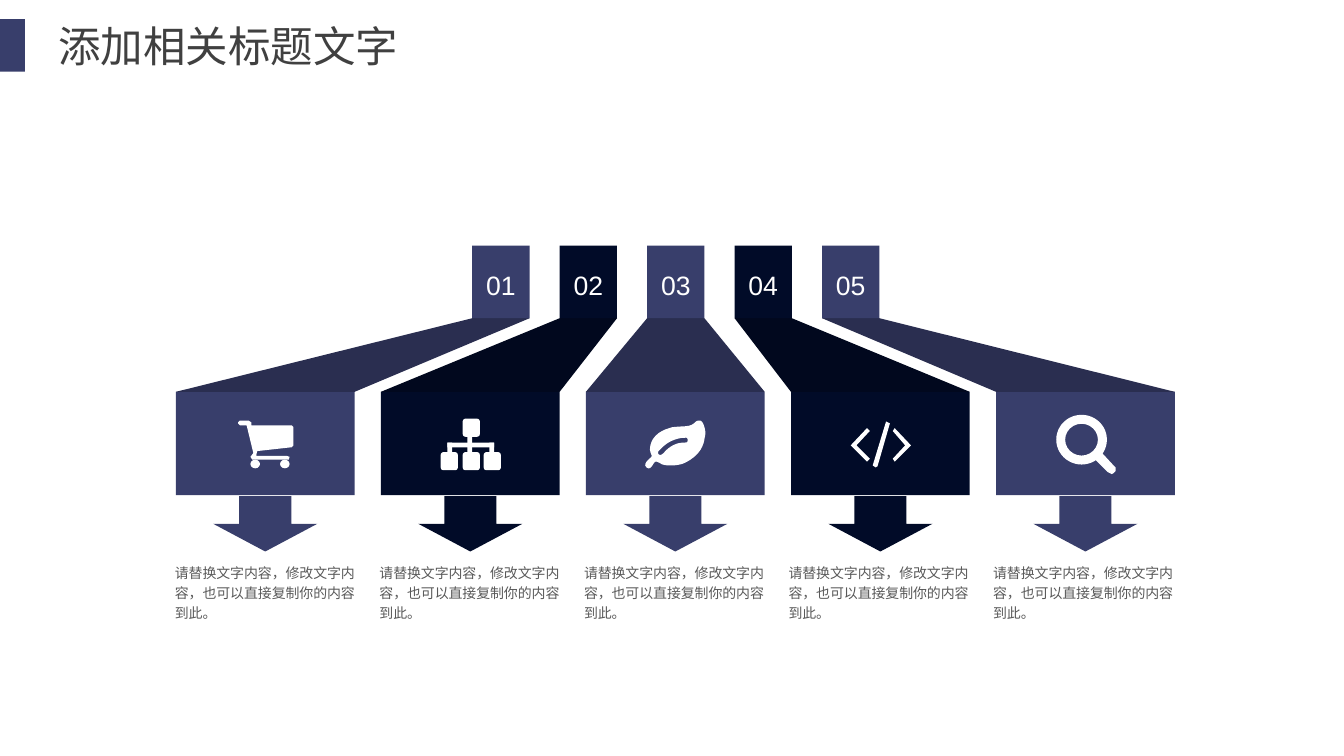
"""Build a slide where five numbered tabs fan out into icon blocks with captions."""
from pptx import Presentation
from pptx.dml.color import RGBColor
from pptx.enum.shapes import MSO_SHAPE
from pptx.enum.text import MSO_ANCHOR, PP_ALIGN
from pptx.util import Inches, Pt

COLORS = {
    "indigo": "383E6B", "indigo_shade": "2A2E50",
    "navy": "010B28", "navy_shade": "01081E",
    "white": "FFFFFF", "title": "404040", "caption": "595959",
}
TITLE = "添加相关标题文字"
CAPTION = "请替换文字内容，修改文字内容，也可以直接复制你的内容到此。"
NO_MARGINS = {"margin_left": 0, "margin_right": 0, "margin_top": 0, "margin_bottom": 0}
COLUMN_COUNT = 5
BLOCK_LEFT, BLOCK_STEP, BLOCK_TOP, BLOCK_WIDTH, BLOCK_HEIGHT = 1.84, 2.145, 4.1, 1.87, 1.08
TAB_LEFT, TAB_STEP, TAB_TOP, TAB_WIDTH, TAB_HEIGHT = 4.94, 0.915, 2.57, 0.6, 0.76
ARROW_TOP, ARROW_WIDTH, ARROW_HEIGHT = 5.19, 1.09, 0.58
CAPTION_LEFT, CAPTION_STEP = 1.83, 2.14
UNITS_PER_INCH = 1000

CART = [(2.51, 4.4), (2.6, 4.4), (2.63, 4.42), (2.63, 4.45), (3.05, 4.45), (3.07, 4.47),
        (3.07, 4.66), (3.05, 4.68), (2.69, 4.72), (2.68, 4.77), (3.0, 4.77), (3.03, 4.78),
        (3.02, 4.81), (2.64, 4.81), (2.62, 4.78), (2.65, 4.74), (2.58, 4.45), (2.51, 4.45),
        (2.49, 4.43), (2.49, 4.42)]
CODE_MARKS = [
    [(9.07, 4.48), (9.1, 4.51), (8.96, 4.66), (9.1, 4.8), (9.07, 4.83), (8.9, 4.66)],
    [(9.27, 4.41), (9.31, 4.43), (9.18, 4.88), (9.16, 4.89), (9.13, 4.87)],
    [(9.36, 4.48), (9.53, 4.66), (9.36, 4.83), (9.34, 4.8), (9.47, 4.66), (9.34, 4.51)],
]
LENS_HANDLE = [(11.46, 4.81), (11.53, 4.74), (11.65, 4.87), (11.67, 4.89), (11.67, 4.93),
               (11.65, 4.95), (11.63, 4.96), (11.59, 4.94)]
LEAF = [
    (7.37, 4.6), (7.35, 4.71), (7.28, 4.78), (7.19, 4.83), (7.14, 4.86), (7.08, 4.87),
    (7.03, 4.87), (7.0, 4.87), (6.96, 4.87), (6.93, 4.86), (6.91, 4.85), (6.88, 4.83),
    (6.86, 4.83), (6.84, 4.83), (6.82, 4.9), (6.79, 4.9), (6.77, 4.9), (6.76, 4.89),
    (6.75, 4.87), (6.75, 4.82), (6.82, 4.79), (6.82, 4.77), (6.81, 4.75), (6.8, 4.72),
    (6.8, 4.7), (6.8, 4.59), (6.89, 4.51), (7.0, 4.48), (7.07, 4.45), (7.21, 4.48),
    (7.26, 4.43), (7.28, 4.41), (7.29, 4.4), (7.32, 4.4), (7.36, 4.4), (7.38, 4.5),
    (7.38, 4.53), (7.38, 4.56), (7.37, 4.58), (7.37, 4.6),
]
LEAF_VEIN = [
    (7.18, 4.58), (7.06, 4.58), (6.97, 4.63), (6.89, 4.72), (6.88, 4.73), (6.88, 4.76),
    (6.91, 4.76), (6.93, 4.76), (6.96, 4.72), (6.97, 4.71), (7.04, 4.65), (7.09, 4.63),
    (7.18, 4.63), (7.2, 4.63), (7.2, 4.58), (7.18, 4.58),
]


def paint(shape, color):
    """Give a shape a flat fill without outline or shadow."""
    shape.shadow.inherit = False
    shape.fill.solid()
    shape.fill.fore_color.rgb = RGBColor.from_string(COLORS[color])
    shape.line.fill.background()


def add_preset(slide, kind, left, top, width, height, color):
    """Add a painted preset shape."""
    shape = slide.shapes.add_shape(kind, Inches(left), Inches(top), Inches(width), Inches(height))
    paint(shape, color)
    return shape


def add_outline(slide, contours, color):
    """Add one painted freeform made of closed contours."""
    scaled = [[(x * UNITS_PER_INCH, y * UNITS_PER_INCH) for x, y in points] for points in contours]
    builder = slide.shapes.build_freeform(*scaled[0][0], scale=Inches(1) / UNITS_PER_INCH)
    for index, points in enumerate(scaled):
        if index:
            builder.move_to(*points[0])
        builder.add_line_segments(points[1:], close=True)
    paint(builder.convert_to_shape(), color)


def curve_points(controls, steps=8):
    """Sample a chain of cubic curves into outline points."""
    points = [controls[0]]
    for first in range(0, len(controls) - 1, 3):
        curve = controls[first:first + 4]
        for step in range(1, steps + 1):
            t = step / steps
            weights = ((1 - t) ** 3, 3 * t * (1 - t) ** 2, 3 * t ** 2 * (1 - t), t ** 3)
            points.append(tuple(sum(w * point[axis] for w, point in zip(weights, curve))
                                for axis in (0, 1)))
    return points


def write_text(shape, text, size, color, frame_format, paragraph_format):
    """Write one formatted paragraph into a shape."""
    frame = shape.text_frame
    frame.text = text
    paragraph = frame.paragraphs[0]
    font_format = {"name": "Arial", "size": Pt(size), "bold": False}
    for target, values in ((frame, {"word_wrap": True, **frame_format}),
                           (paragraph, paragraph_format), (paragraph.runs[0].font, font_format)):
        for name, value in values.items():
            setattr(target, name, value)
    paragraph.runs[0].font.color.rgb = RGBColor.from_string(COLORS[color])


def add_title(slide):
    """Place the slide title and its accent bar."""
    title = slide.shapes.title
    position = {"left": 0.61, "top": 0.21, "width": 4.33, "height": 0.54}
    for name, value in position.items():
        setattr(title, name, Inches(value))
    write_text(title, TITLE, 32, "title", {**NO_MARGINS, "vertical_anchor": MSO_ANCHOR.TOP},
               {"alignment": PP_ALIGN.LEFT})
    add_preset(slide, MSO_SHAPE.RECTANGLE, 0, 0.2, 0.26, 0.55, "indigo")


def add_column(slide, index):
    """Add a numbered tab, its fanned band, block and arrow."""
    color = ("indigo", "navy")[index % 2]
    block = BLOCK_LEFT + index * BLOCK_STEP
    tab = TAB_LEFT + index * TAB_STEP
    tab_bottom = TAB_TOP + TAB_HEIGHT
    add_preset(slide, MSO_SHAPE.RECTANGLE, block, BLOCK_TOP, BLOCK_WIDTH, BLOCK_HEIGHT, color)
    add_preset(slide, MSO_SHAPE.DOWN_ARROW, block + (BLOCK_WIDTH - ARROW_WIDTH) / 2, ARROW_TOP,
               ARROW_WIDTH, ARROW_HEIGHT, color)
    add_outline(slide, [[(tab, tab_bottom), (tab + TAB_WIDTH, tab_bottom),
                         (block + BLOCK_WIDTH, BLOCK_TOP), (block, BLOCK_TOP)]],
                f"{color}_shade")
    number = add_preset(slide, MSO_SHAPE.RECTANGLE, tab, TAB_TOP, TAB_WIDTH, TAB_HEIGHT, color)
    write_text(number, f"{index + 1:02}", 20, "white", {"vertical_anchor": MSO_ANCHOR.MIDDLE},
               {"alignment": PP_ALIGN.CENTER, "line_spacing": 1.2})


def add_caption(slide, index):
    """Add the caption below a column."""
    left = CAPTION_LEFT + index * CAPTION_STEP
    box = slide.shapes.add_textbox(Inches(left), Inches(5.87), Inches(1.93), Inches(0.64))
    write_text(box, CAPTION, 10.5, "caption", NO_MARGINS, {"line_spacing": 1.2})


def add_cart_icon(slide):
    """Draw the shopping cart."""
    add_outline(slide, [CART], "white")
    for left in (2.62, 2.93):
        add_preset(slide, MSO_SHAPE.OVAL, left, 4.81, 0.1, 0.09, "white")


def add_hierarchy_icon(slide):
    """Draw the hierarchy of one node above three."""
    for left, top in ((4.84, 4.38), (4.61, 4.73), (4.84, 4.73), (5.06, 4.73)):
        add_preset(slide, MSO_SHAPE.ROUNDED_RECTANGLE, left, top, 0.18, 0.19, "white")
    for left, top, width, height in ((4.89, 4.56, 0.05, 0.18), (4.68, 4.63, 0.49, 0.05),
                                     (4.68, 4.63, 0.05, 0.11), (5.12, 4.63, 0.05, 0.11)):
        add_preset(slide, MSO_SHAPE.RECTANGLE, left, top, width, height, "white")


def add_lens_icon(slide):
    """Draw the magnifying glass."""
    ring = add_preset(slide, MSO_SHAPE.DONUT, 11.05, 4.34, 0.53, 0.52, "white")
    ring.adjustments[0] = 0.18
    add_outline(slide, [LENS_HANDLE], "white")


def main():
    """Build and save the slide."""
    presentation = Presentation()
    presentation.slide_width, presentation.slide_height = Inches(14.06), Inches(7.91)
    slide = presentation.slides.add_slide(presentation.slide_layouts[5])
    add_title(slide)
    for index in range(COLUMN_COUNT):
        add_column(slide, index)
        add_caption(slide, index)
    add_cart_icon(slide)
    add_hierarchy_icon(slide)
    add_outline(slide, [curve_points(LEAF), curve_points(LEAF_VEIN)], "white")
    add_outline(slide, CODE_MARKS, "white")
    add_lens_icon(slide)
    presentation.save("out.pptx")


if __name__ == "__main__":
    main()
